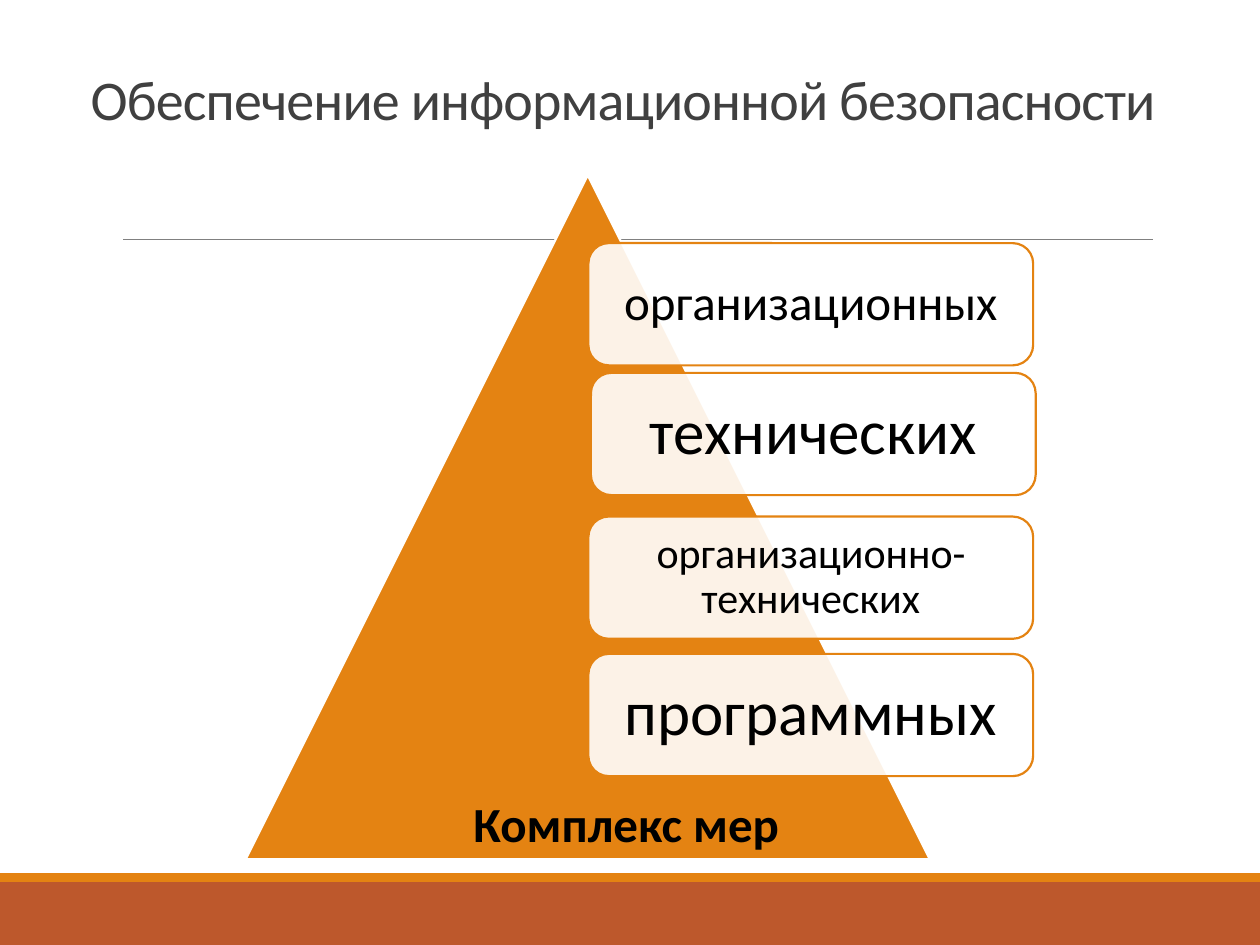
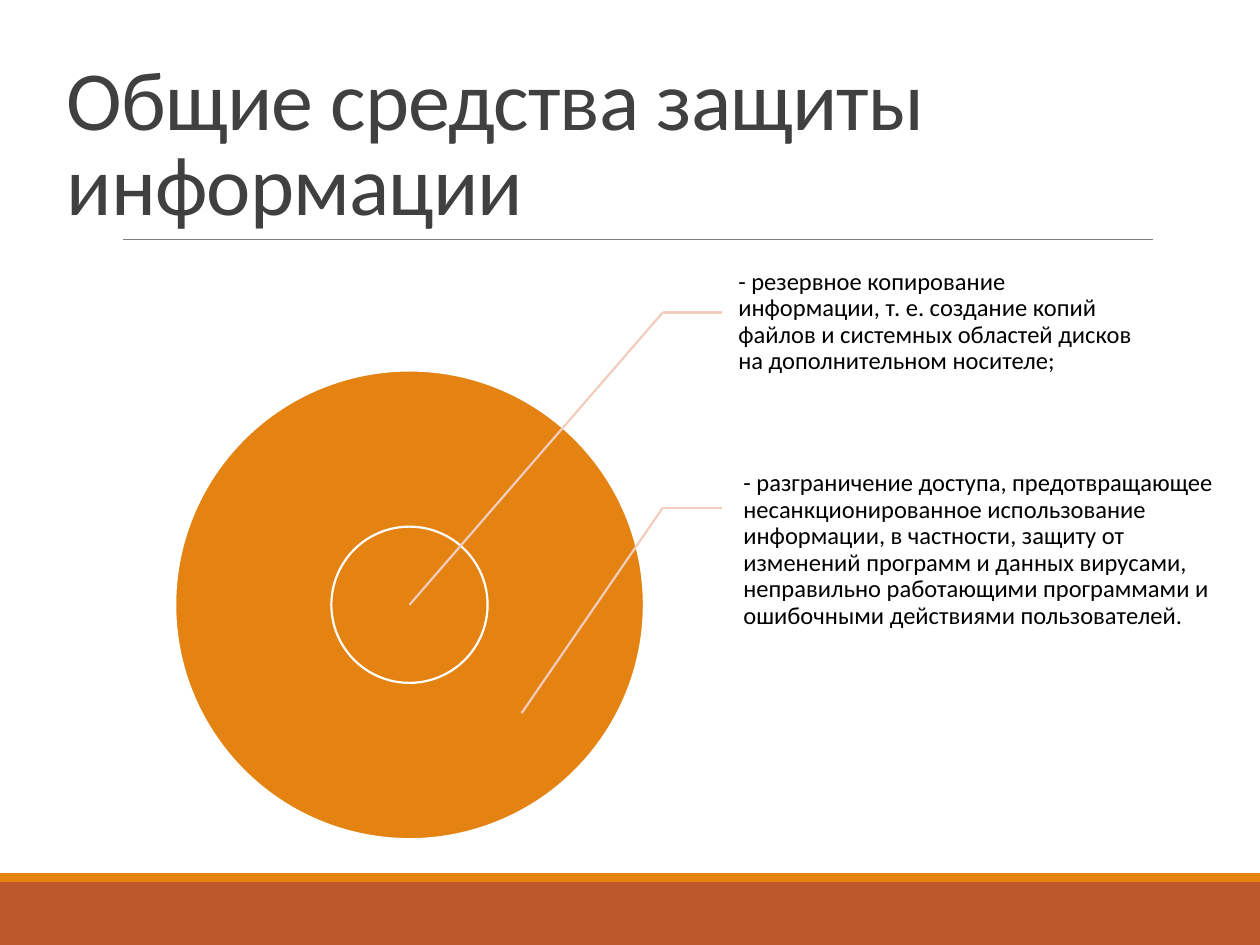
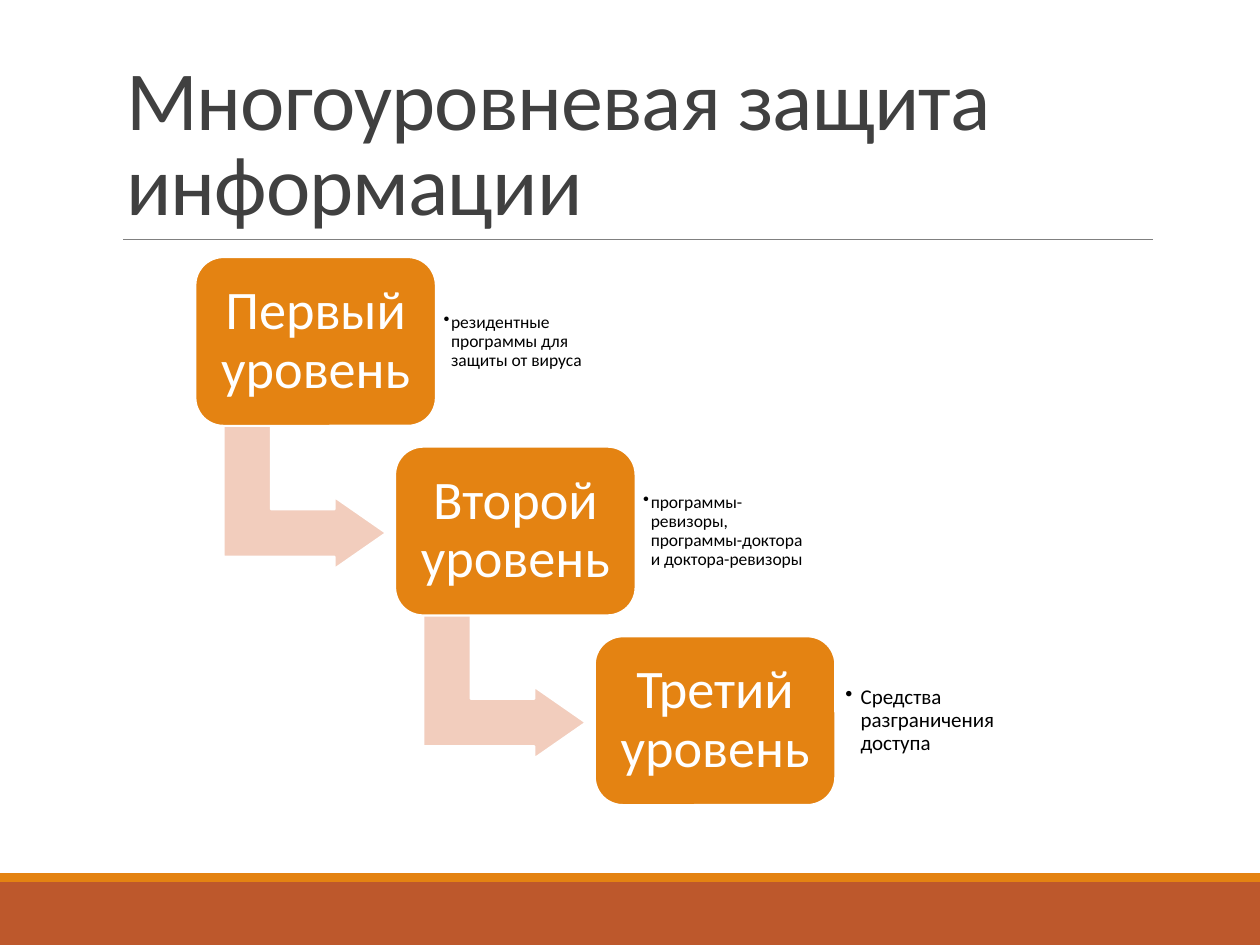
from dataclasses import dataclass

from lxml import etree
from pptx import Presentation
from pptx.dml.color import RGBColor
from pptx.enum.shapes import MSO_CONNECTOR, MSO_SHAPE
from pptx.enum.text import MSO_ANCHOR, MSO_AUTO_SIZE, PP_ALIGN
from pptx.oxml.ns import qn
from pptx.util import Inches, Pt

STRAIGHT = MSO_CONNECTOR.STRAIGHT
RECTANGLE, ROUNDED = MSO_SHAPE.RECTANGLE, MSO_SHAPE.ROUNDED_RECTANGLE
TRIANGLE, OVAL, BENT_ARROW = MSO_SHAPE.ISOSCELES_TRIANGLE, MSO_SHAPE.OVAL, MSO_SHAPE.BENT_UP_ARROW
TOP, MIDDLE, BOTTOM = MSO_ANCHOR.TOP, MSO_ANCHOR.MIDDLE, MSO_ANCHOR.BOTTOM
LEFT, CENTER = PP_ALIGN.LEFT, PP_ALIGN.CENTER
TITLE_ONLY = 5


@dataclass(frozen=True)
class Theme:
    font: str = "Calibri"
    orange: str = "E48312"
    rust: str = "BD582C"
    peach: str = "F2CDBD"
    white: str = "FFFFFF"
    black: str = "000000"
    title: str = "404040"
    rule: str = "808080"
    title_size: int = 48
    long_title_size: int = 32
    level_size: int = 31
    caption_size: int = 28
    callout_size: int = 14
    outline: float = 1.25
    hairline: float = 0.5


THEME = Theme()

presentation = Presentation()
presentation.slide_width = Inches(10)
presentation.slide_height = Inches(7.5)
CELL = presentation.slide_width // 100  # the slide is a grid of 100 columns and 75 rows


def add_part(slide, kind, cells, fill=None, line=None, width=THEME.outline):
    """Add a text box (kind None), a connector or a preset shape, placed in grid cells."""
    lengths = [int(CELL * count) for count in cells]
    if kind is None:
        return slide.shapes.add_textbox(*lengths)
    if kind is STRAIGHT:
        shape = slide.shapes.add_connector(kind, *lengths)
    else:
        shape = slide.shapes.add_shape(kind, *lengths)
        shape.fill.solid()
        shape.fill.fore_color.rgb = RGBColor.from_string(fill)
    if line:
        shape.line.color.rgb = RGBColor.from_string(line)
        shape.line.width = Pt(width)
    else:
        shape.line.fill.background()
    etree.SubElement(shape._element.spPr, qn("a:effectLst"))
    return shape


def write_text(shape, text, size, color=THEME.black, bold=False, anchor=MIDDLE, align=LEFT,
               spacing=0.9, insets=(1, 0.5, 1, 0.5), hanging=0, tracking=0):
    """Fill a shape with one paragraph; insets and the bullet's hanging indent are in cells."""
    frame = shape.text_frame
    frame.word_wrap = True
    frame.auto_size = MSO_AUTO_SIZE.NONE
    frame.vertical_anchor = anchor
    for side, inset in zip(("left", "top", "right", "bottom"), insets):
        setattr(frame, f"margin_{side}", int(CELL * inset))
    paragraph = frame.paragraphs[0]
    paragraph.alignment = align
    paragraph.line_spacing = spacing
    if hanging:
        properties = paragraph._p.get_or_add_pPr()
        properties.set("marL", str(int(CELL * hanging)))
        properties.set("indent", str(-int(CELL * hanging)))
        etree.SubElement(properties, qn("a:buChar"), char="•")
    run = paragraph.add_run()
    run.text = text
    for name, value in {"name": THEME.font, "size": Pt(size), "bold": bold}.items():
        setattr(run.font, name, value)
    run.font.color.rgb = RGBColor.from_string(color)
    if tracking:
        run._r.get_or_add_rPr().set("spc", str(int(tracking * 100)))


# Slides and their titles
layout = presentation.slide_layouts[TITLE_ONLY]
titles = [
    ("Обеспечение информационной безопасности", THEME.long_title_size, (6.2, 0, 93.7, 11)),
    ("Общие средства защиты информации", THEME.title_size, (4.3, 3.1, 87.2, 15.9)),
    ("Многоуровневая защита информации", THEME.title_size, (9, 3.1, 82.5, 15.9)),
]
slides = []
for text, size, cells in titles:
    slide = presentation.slides.add_slide(layout)
    title = slide.shapes.title
    for name, count in zip(("left", "top", "width", "height"), cells):
        setattr(title, name, int(CELL * count))
    write_text(title, text, size, THEME.title, anchor=BOTTOM, spacing=0.85, tracking=-0.5)
    slides.append(slide)
measures_slide, means_slide, levels_slide = slides

# Footer bands and title rule, moved to the layout that all slides share
for placeholder in list(layout.placeholders)[1:]:
    placeholder._element.getparent().remove(placeholder._element)
shared_parts = [
    add_part(measures_slide, RECTANGLE, (0, 70, 100, 5), THEME.rust),
    add_part(measures_slide, RECTANGLE, (0, 69.3, 100, 0.7), THEME.orange),
    add_part(measures_slide, STRAIGHT, (9.8, 19, 91.5, 19), line=THEME.rule, width=THEME.hairline),
]
for part in shared_parts:
    layout.shapes._spTree.append(part._element)

# Slide 1: pyramid of measures
add_part(measures_slide, TRIANGLE, (19.5, 13.9, 54.3, 54.3), THEME.orange, THEME.white)
measures = [
    ("организационных", 28, 46.7, 19.3, 1.2),
    ("технических", 36, 46.9, 29.6, 1.5),
    ("организационно-технических", 24, 46.7, 41, 1),
    ("программных", 36, 46.7, 51.9, 1.5),
]
for text, size, left, top, inset in measures:
    box = add_part(measures_slide, ROUNDED, (left, top, 35.3, 9.7), THEME.white, THEME.orange)
    fill_color = box._element.spPr.find(qn("a:solidFill"))[0]
    etree.SubElement(fill_color, qn("a:alpha"), val="90000")
    write_text(box, text, size, align=CENTER, insets=[inset] * 4)
caption = add_part(measures_slide, None, (36.6, 62.5, 43.3, 5.7))
write_text(caption, "Комплекс мер", THEME.caption_size, bold=True, anchor=TOP, spacing=1)

# Slide 2: target with two callouts
center_column, center_row = 32.5, 48
for diameter in (37.2, 12.4):
    corner = (center_column - diameter / 2, center_row - diameter / 2)
    add_part(means_slide, OVAL, (*corner, diameter, diameter), THEME.orange, THEME.white)
bend_column, label_column = 52.6, 57.3
callouts = [
    ("- резервное копирование информации, т. е. создание копий файлов и системных областей "
     "дисков на дополнительном носителе;",
     (57.5, 17.8, 33, 15.5), 24.8, (center_column, center_row)),
    ("- разграничение доступа, предотвращающее несанкционированное использование информации, "
     "в частности, защиту от изменений программ и данных вирусами, неправильно работающими "
     "программами и ошибочными действиями пользователей.",
     (57.9, 35.9, 40.6, 15.5), 40.3, (41.4, 56.6)),
]
for text, cells, bend_row, target in callouts:
    label = add_part(means_slide, None, cells)
    write_text(label, text, THEME.callout_size, insets=(1.1, 0.2, 0.2, 0.2))
    for end in ((label_column, bend_row), target):
        add_part(means_slide, STRAIGHT, (bend_column, bend_row, *end), line=THEME.peach)

# Slide 3: staircase of protection levels
levels = [
    ("Первый уровень", "резидентные программы для защиты от вируса", 10, 0.5, 0.6),
    ("Второй уровень", "программы-ревизоры, программы-доктора и доктора-ревизоры", 10, 0.5, 0.6),
    ("Третий уровень", "Средства разграничения доступа", 12, 0.7, 1.2),
]
for index, (name, tools, size, inset, hanging) in enumerate(levels):
    left, top = 15.5 + 15.85 * index, 20.4 + 15.05 * index
    if index < len(levels) - 1:
        arrow = add_part(levels_slide, BENT_ARROW, (left + 3, top + 12.6, 11.4, 12.9),
                         THEME.peach, THEME.white)
        arrow.rotation = 90
        for number, share in enumerate((0.33, 0.25, 0.36)):
            arrow.adjustments[number] = share
    step = add_part(levels_slide, ROUNDED, (left, top, 19.1, 13.4), THEME.orange, THEME.white)
    write_text(step, name, THEME.level_size, THEME.white, align=CENTER, insets=[1.3] * 4)
    note = add_part(levels_slide, None, (left + 19.2, top + 1.3, 13.9, 10.8))
    write_text(note, tools, size, insets=[inset] * 4, hanging=hanging)

presentation.save("out.pptx")
